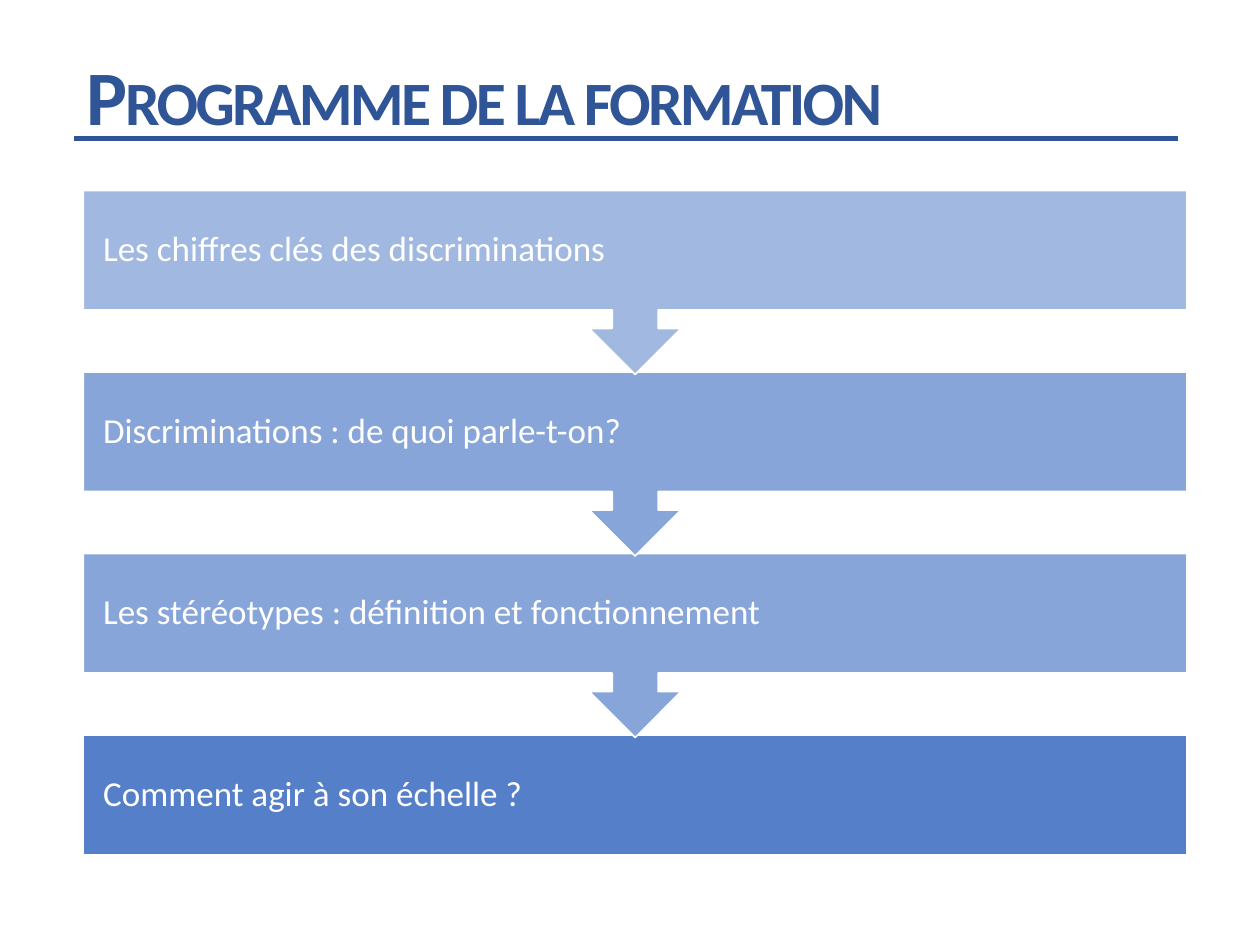
"""Build the training programme slide: four steps linked by arrow callouts."""
import pptx
import pptx.dml.color
import pptx.enum.shapes
import pptx.enum.text
import pptx.oxml.ns
import pptx.util
from lxml import etree
from pptx.util import Cm, Pt


def color(value):
    return pptx.dml.color.RGBColor.from_string(value)


def add_element(parent, tag, **attributes):
    return etree.SubElement(parent, pptx.oxml.ns.qn(tag), **attributes)


presentation = pptx.Presentation()
presentation.slide_width = Cm(25.4)
presentation.slide_height = Cm(19.05)
slide = presentation.slides.add_slide(presentation.slide_layouts[6])

shape_types = pptx.enum.shapes.MSO_SHAPE
callout, rectangle = shape_types.DOWN_ARROW_CALLOUT, shape_types.RECTANGLE
steps = [
    ("Les chiffres clés des discriminations", callout, 3.71, 50),
    ("Discriminations : de quoi parle-t-on?", callout, 3.71, 63),
    ("Les stéréotypes : définition et fonctionnement", callout, 3.71, 63),
    ("Comment agir à son échelle ?", rectangle, 2.41, 90),
]
for index, (text, shape_type, height, opacity) in reversed(list(enumerate(steps))):
    shape = slide.shapes.add_shape(
        shape_type, Cm(1.68), Cm(3.84 + 3.66 * index), Cm(22.25), Cm(height))
    shape.shadow.inherit = False
    shape.fill.solid()
    shape.fill.fore_color.rgb = color("4472C4")
    fill_color = shape.fill._xPr.find(".//" + pptx.oxml.ns.qn("a:srgbClr"))
    add_element(fill_color, "a:alpha", val=str(opacity * 1000))
    shape.line.color.rgb = color("FFFFFF")
    shape.line.width = Pt(1)
    frame = shape.text_frame
    frame.word_wrap = True
    frame.vertical_anchor = pptx.enum.text.MSO_ANCHOR.MIDDLE
    frame.margin_left = frame.margin_right = Cm(0.4)
    frame.margin_top = frame.margin_bottom = Cm(0.4)
    paragraph = frame.paragraphs[0]
    paragraph.text = text
    paragraph.alignment = pptx.enum.text.PP_ALIGN.LEFT
    paragraph.line_spacing = 0.9
    paragraph.font.name = "Calibri"
    paragraph.font.size = Pt(20)
    paragraph.font.color.rgb = color("FFFFFF")

title = slide.shapes.add_textbox(Cm(1.5), Cm(0.86), Cm(22.68), Cm(2.13))
title.text_frame.word_wrap = True
title.text_frame.auto_size = pptx.enum.text.MSO_AUTO_SIZE.SHAPE_TO_FIT_TEXT
paragraph = title.text_frame.paragraphs[0]
run = paragraph.add_run()
run.text = "Programme de la formation"
run.font.name = "Calibri"
run.font.size = Pt(44)
run.font.bold = True
run.font.color.rgb = color("2F5597")
run.font._element.set("cap", "small")
run.font._element.set("spc", "-150")

underline = slide.shapes.add_connector(
    pptx.enum.shapes.MSO_CONNECTOR.STRAIGHT, Cm(1.5), Cm(2.79), Cm(23.75), Cm(2.79))
underline.line.color.rgb = color("2F5597")
underline.line.width = Pt(3)
add_element(underline._element.spPr, "a:effectLst")

presentation.save("out.pptx")
